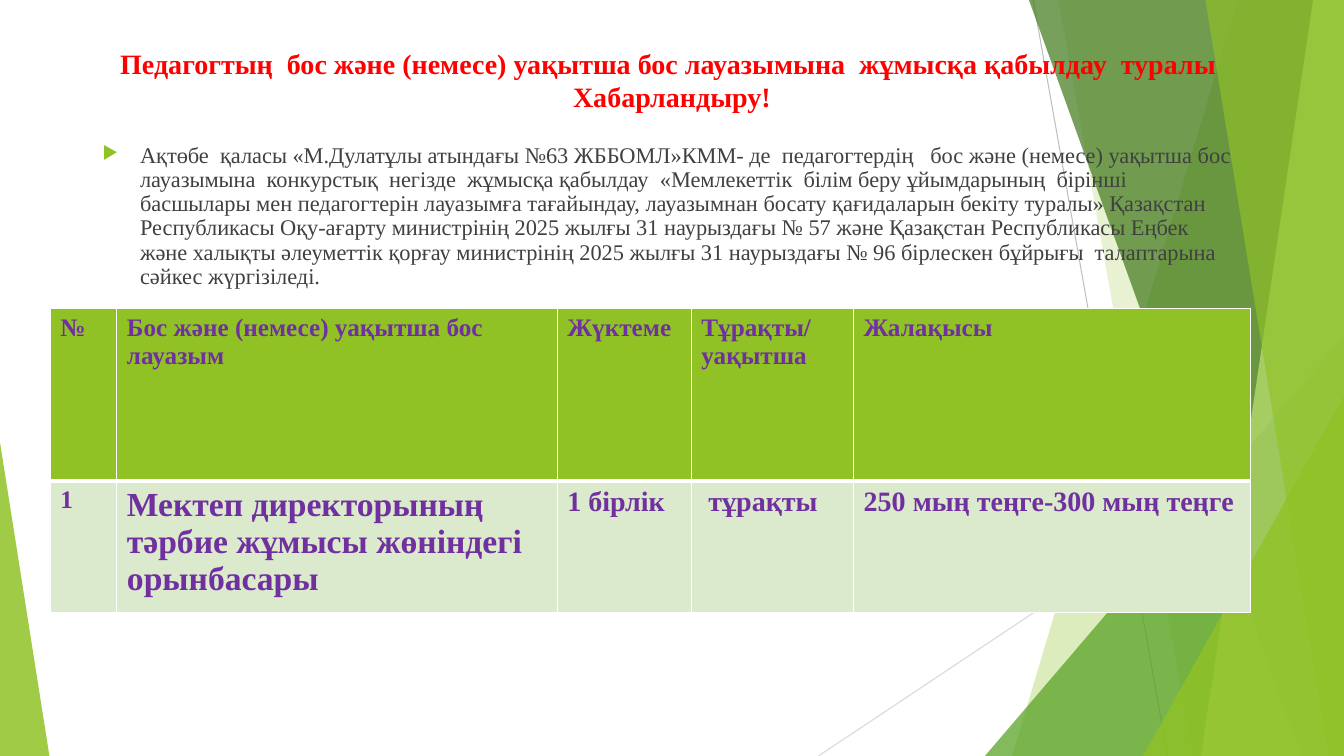
"""Build a slide announcing a teaching vacancy, with a table of posts."""
import lxml.etree
import pptx
import pptx.dml.color
import pptx.enum.shapes
import pptx.enum.text
import pptx.oxml.ns
import pptx.util

Pt = pptx.util.Pt
qn = pptx.oxml.ns.qn
WIDTH, HEIGHT = 960, 540
FONT = "Times New Roman"
COLORS = {
    "lime": "90C226", "green": "54A021", "forest": "3F7819", "pale": "C0E474",
    "mint": "DBE9CD", "white": "FFFFFF", "grey": "BFBFBF", "silver": "D9D9D9",
    "red": "FF0000", "text": "404040", "purple": "7030A0",
}
TITLE = [
    "Педагогтың  бос және (немесе) уақытша бос лауазымына  жұмысқа қабылдау  туралы ",
    "Хабарландыру!",
]
BODY = (
    "Ақтөбе  қаласы «М.Дулатұлы атындағы №63 ЖББОМЛ»КММ- де  педагогтердің   бос және "
    "(немесе) уақытша бос лауазымына  конкурстық  негізде  жұмысқа қабылдау  «Мемлекеттік  "
    "білім беру ұйымдарының  бірінші басшылары мен педагогтерін лауазымға тағайындау, "
    "лауазымнан босату қағидаларын бекіту туралы» Қазақстан Республикасы Оқу-ағарту "
    "министрінің 2025 жылғы 31 наурыздағы № 57 және Қазақстан Республикасы Еңбек және "
    "халықты әлеуметтік қорғау министрінің 2025 жылғы 31 наурыздағы № 96 бірлескен "
    "бұйрығы  талаптарына сәйкес жүргізіледі."
)
COLUMNS = [47.5, 314.6, 95.8, 115.9, 283.7]
ROWS = [123.1, 77.8]
HEADER = ["№", "Бос және (немесе) уақытша бос лауазым", "Жүктеме",
          "Тұрақты/\nуақытша", "Жалақысы"]
VACANCY = ["1", "Мектеп директорының тәрбие жұмысы жөніндегі орынбасары",
           "1 бірлік", " тұрақты", "250 мың теңге-300 мың теңге"]
VACANCY_SIZES = [18, 24, 20, 20, 20]


def rgb(name):
    return pptx.dml.color.RGBColor.from_string(COLORS[name])


def paint(shape, color, opacity):
    shape.shadow.inherit = False
    shape.fill.solid()
    shape.fill.fore_color.rgb = rgb(color)
    shape.line.fill.background()
    tint = shape._element.spPr.find(qn("a:solidFill"))[0]
    lxml.etree.SubElement(tint, qn("a:alpha"), val=str(opacity * 1000))


def add_ray(page, start, end, color):
    ray = page.shapes.add_connector(
        pptx.enum.shapes.MSO_CONNECTOR.STRAIGHT, *map(Pt, start + end))
    ray.line.color.rgb = rgb(color)
    ray.line.width = Pt(0.75)
    lxml.etree.SubElement(ray._element.spPr, qn("a:effectLst"))


def add_band(page, top, bottom, color, opacity):
    """Fill from a slanted edge to the right side of the slide."""
    outline = page.shapes.build_freeform(Pt(top), 0)
    corners = [(WIDTH, 0), (WIDTH, HEIGHT), (bottom, HEIGHT)]
    outline.add_line_segments([(Pt(x), Pt(y)) for x, y in corners], close=True)
    paint(outline.convert_to_shape(), color, opacity)


def add_corner(page, left, top, width, apex, color, opacity):
    """Stand a right triangle on the bottom edge of the slide."""
    corner = page.shapes.add_shape(
        pptx.enum.shapes.MSO_SHAPE.ISOSCELES_TRIANGLE,
        Pt(left), Pt(top), Pt(width), Pt(HEIGHT - top))
    corner.adjustments[0] = apex
    paint(corner, color, opacity)


def add_span(para, text, size, color, bold=False):
    span = para.add_run()
    span.text = text
    span.font.name = FONT
    span.font.size = Pt(size)
    span.font.bold = bold
    span.font.color.rgb = rgb(color)


def add_box(page, top, height, anchor):
    box = page.shapes.add_textbox(Pt(66), Pt(top), Pt(828), Pt(height))
    box.text_frame.word_wrap = True
    box.text_frame.vertical_anchor = anchor
    return box.text_frame.paragraphs[0]


def add_title(page):
    para = add_box(page, 28.8, 56.2, pptx.enum.text.MSO_ANCHOR.MIDDLE)
    para.alignment = pptx.enum.text.PP_ALIGN.CENTER
    for index, text in enumerate(TITLE):
        if index:
            para.add_line_break()
        add_span(para, text, 20, "red", True)


def add_body(page):
    para = add_box(page, 99.4, 121, pptx.enum.text.MSO_ANCHOR.TOP)
    para.line_spacing = 0.9
    props = para._p.get_or_add_pPr()
    props.set("marL", str(Pt(27)))
    props.set("indent", str(-Pt(27)))
    tint = lxml.etree.SubElement(props, qn("a:buClr"))
    lxml.etree.SubElement(tint, qn("a:srgbClr"), val=COLORS["lime"])
    lxml.etree.SubElement(props, qn("a:buSzPct"), val="80000")
    lxml.etree.SubElement(props, qn("a:buChar"), char="▶")
    add_span(para, BODY, 16, "text")


def add_borders(cell, top, bottom):
    props = cell._tc.get_or_add_tcPr()
    for side, width in (("L", 1), ("R", 1), ("T", top), ("B", bottom)):
        edge = lxml.etree.SubElement(props, qn("a:ln" + side), w=str(Pt(width)))
        fill = lxml.etree.SubElement(edge, qn("a:solidFill"))
        lxml.etree.SubElement(fill, qn("a:srgbClr"), val=COLORS["white"])


def fill_row(table, row, texts, sizes, color, borders):
    for column, (text, size) in enumerate(zip(texts, sizes)):
        cell = table.cell(row, column)
        add_borders(cell, *borders)
        cell.fill.solid()
        cell.fill.fore_color.rgb = rgb(color)
        for index, line in enumerate(text.split("\n")):
            frame = cell.text_frame
            para = frame.add_paragraph() if index else frame.paragraphs[0]
            add_span(para, line, size, "purple", True)


def add_vacancies(page):
    table = page.shapes.add_table(
        len(ROWS), len(COLUMNS), Pt(36), Pt(220.6),
        Pt(sum(COLUMNS)), Pt(sum(ROWS))).table
    for column, width in zip(table.columns, COLUMNS):
        column.width = Pt(width)
    for row, height in zip(table.rows, ROWS):
        row.height = Pt(height)
    fill_row(table, 0, HEADER, [18] * len(HEADER), "lime", (1, 3))
    fill_row(table, 1, VACANCY, VACANCY_SIZES, "mint", (3, 1))


def main():
    deck = pptx.Presentation()
    deck.slide_width, deck.slide_height = Pt(WIDTH), Pt(HEIGHT)
    page = deck.slides.add_slide(deck.slide_layouts[6])
    add_ray(page, (738, 0), (834, HEIGHT), "grey")
    add_ray(page, (WIDTH, 290), (584.6, HEIGHT), "silver")
    add_band(page, 884, 723, "lime", 30)
    add_band(page, 756, 852, "lime", 20)
    add_corner(page, 703.5, 240, 256.5, 1, "green", 72)
    add_band(page, 735, 929.5, "forest", 70)
    add_band(page, 938, 858, "pale", 70)
    add_band(page, 861, 949, "lime", 65)
    add_corner(page, 816.5, 283, 143.5, 1, "lime", 80)
    add_corner(page, 0, 316, 35.3, 0, "lime", 85)
    add_title(page)
    add_body(page)
    add_vacancies(page)
    deck.save("out.pptx")


if __name__ == "__main__":
    main()
